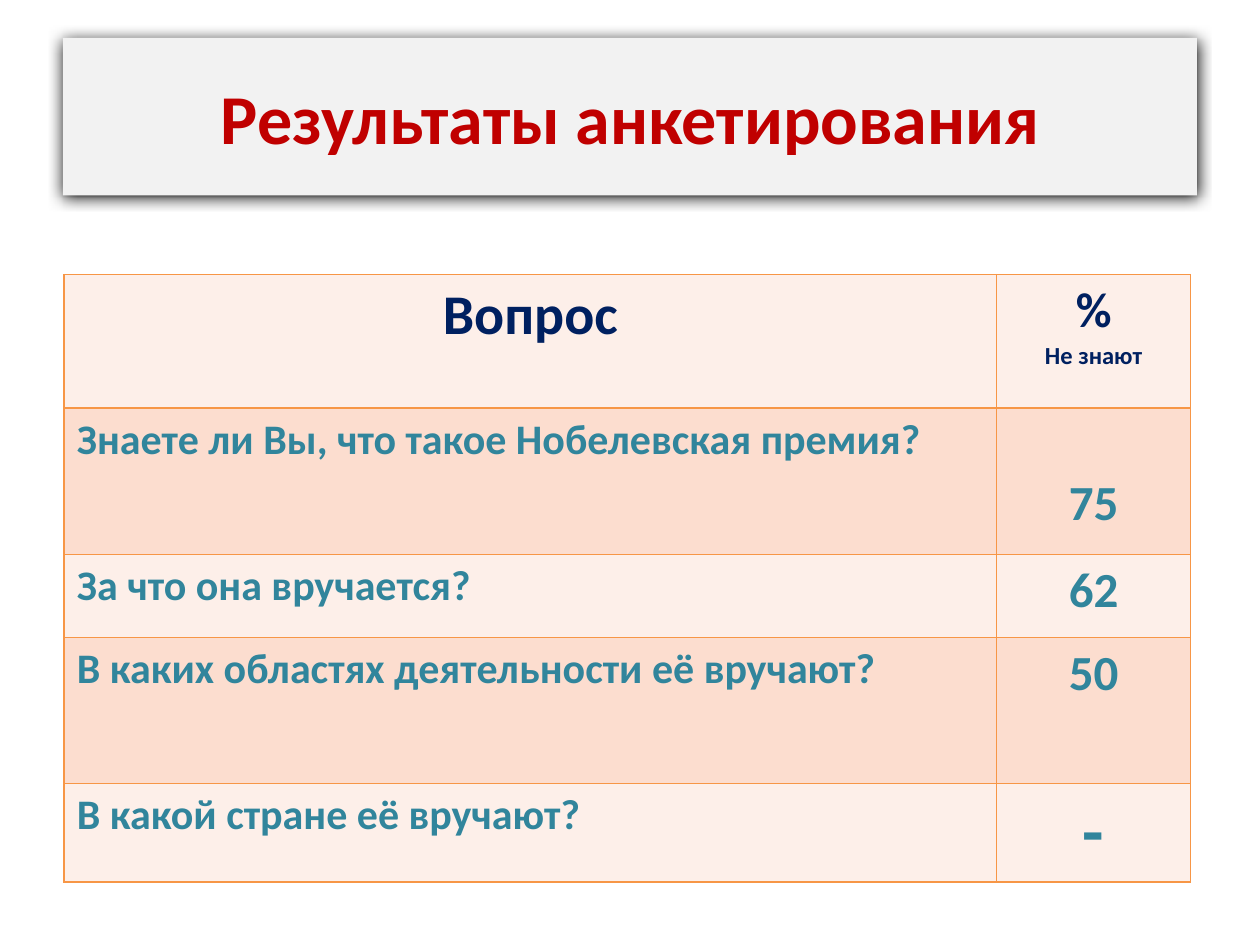
from lxml.etree import SubElement
from pptx import Presentation
from pptx.dml.color import RGBColor as RGB
from pptx.enum.shapes import MSO_SHAPE as SHAPE
from pptx.enum.text import MSO_ANCHOR as ANCHOR, PP_ALIGN as ALIGN
from pptx.oxml.ns import qn
from pptx.util import Inches, Pt

COLORS = {
    "title": "C00000", "panel": "F2F2F2", "shadow": "000000",
    "head": "002060", "body": "31859C", "border": "F79646",
    "light": "FDEFE9", "dark": "FCDDCF",
}
FONT = "Calibri"
TITLE = "Результаты анкетирования"
HEADER = ([("Вопрос", 32)], [("%", 28), ("Не знают", 14)])
ANSWERS = [
    ("Знаете ли Вы, что такое Нобелевская премия?", "75", 28),
    ("За что она вручается?", "62", 28),
    ("В каких областях деятельности её вручают?", "50", 28),
    ("В какой стране её вручают?", "-", 40),
]
COLS = [7.4, 1.54]
ROWS = [1.06, 1.16, 0.66, 1.16, 0.78]
TABLE_LEFT, TABLE_TOP = 0.51, 2.18
LOWERED_ROW, LOWERED_MARGIN = 1, 0.52


def rgb(name):
    return RGB.from_string(COLORS[name])


def write(tf, lines, color, align):
    for i, (text, size) in enumerate(lines):
        p = tf.add_paragraph() if i else tf.paragraphs[0]
        p.alignment = align
        r = p.add_run()
        r.text = text
        r.font.name, r.font.size, r.font.bold = FONT, Pt(size), True
        r.font.color.rgb = rgb(color)


def add_color(parent, name):
    SubElement(parent, qn("a:srgbClr"), val=COLORS[name])


def add_borders(cell):
    tc_pr = cell._tc.get_or_add_tcPr()
    for side in ("lnL", "lnR", "lnT", "lnB"):
        ln = SubElement(tc_pr, qn(f"a:{side}"), w=str(Pt(1)))
        add_color(SubElement(ln, qn("a:solidFill")), "border")


def add_title(slide):
    sp = slide.shapes.add_shape(
        SHAPE.RECTANGLE, Inches(0.5), Inches(0.3), Inches(9), Inches(1.25))
    sp.fill.solid()
    sp.fill.fore_color.rgb = rgb("panel")
    sp.line.fill.background()
    sp.shadow.inherit = False
    effects = sp._element.spPr.find(qn("a:effectLst"))
    shadow = SubElement(effects, qn("a:outerShdw"), blurRad=str(Pt(8.5)),
                        dist=str(Pt(1)), dir=str(90 * 60000), rotWithShape="0")
    add_color(shadow, "shadow")
    tf = sp.text_frame
    tf.word_wrap = True
    tf.vertical_anchor = ANCHOR.MIDDLE
    write(tf, [(TITLE, 40)], "title", ALIGN.CENTER)


def add_results(slide):
    table = slide.shapes.add_table(
        len(ROWS), len(COLS), Inches(TABLE_LEFT), Inches(TABLE_TOP),
        Inches(sum(COLS)), Inches(sum(ROWS))).table
    for column, width in zip(table.columns, COLS):
        column.width = Inches(width)
    for row, height in zip(table.rows, ROWS):
        row.height = Inches(height)
    content = [HEADER] + [([(question, 24)], [(value, size)])
                          for question, value, size in ANSWERS]
    for i, row in enumerate(content):
        for j, lines in enumerate(row):
            cell = table.cell(i, j)
            add_borders(cell)
            cell.fill.solid()
            cell.fill.fore_color.rgb = rgb("dark" if i % 2 else "light")
            align = ALIGN.LEFT if i and j == 0 else ALIGN.CENTER
            write(cell.text_frame, lines, "body" if i else "head", align)
    table.cell(LOWERED_ROW, 1).margin_top = Inches(LOWERED_MARGIN)


def main():
    prs = Presentation()
    prs.slide_width, prs.slide_height = Inches(10), Inches(7.5)
    slide = prs.slides.add_slide(prs.slide_layouts[6])
    add_title(slide)
    add_results(slide)
    prs.save("out.pptx")


if __name__ == "__main__":
    main()
